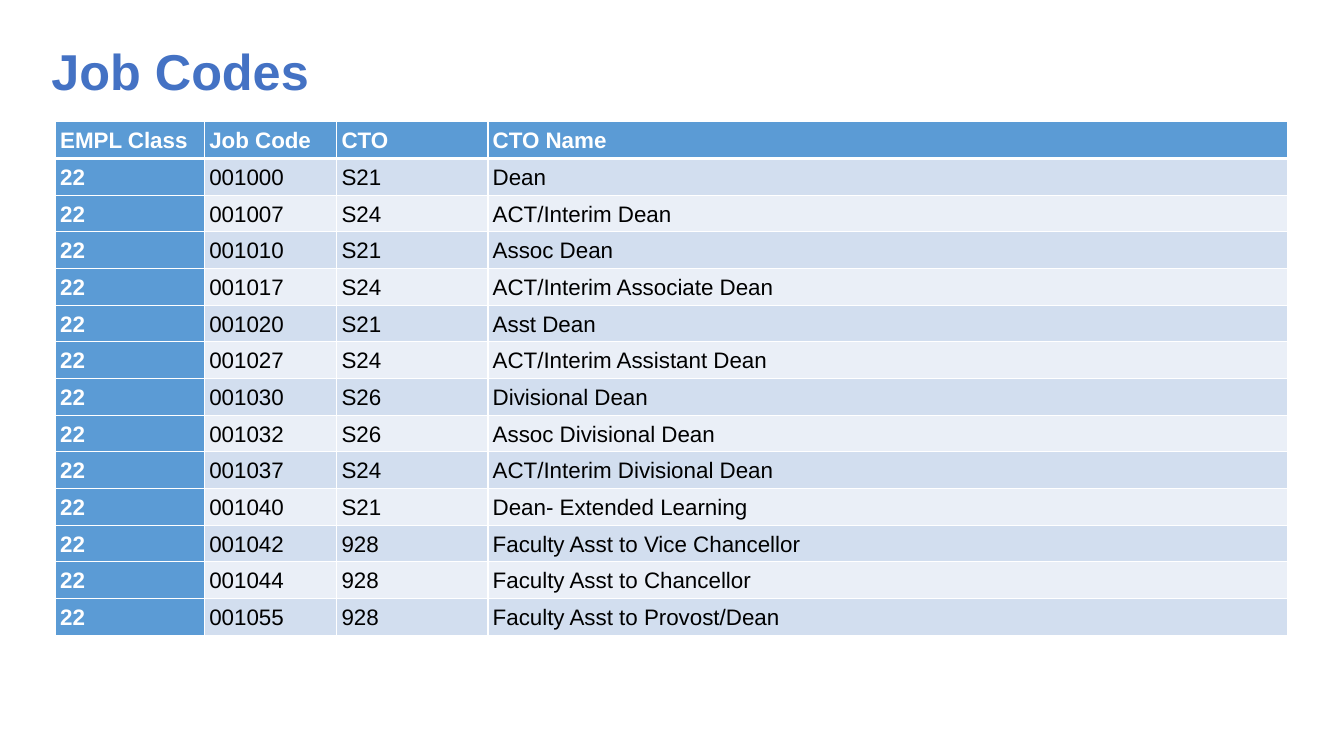
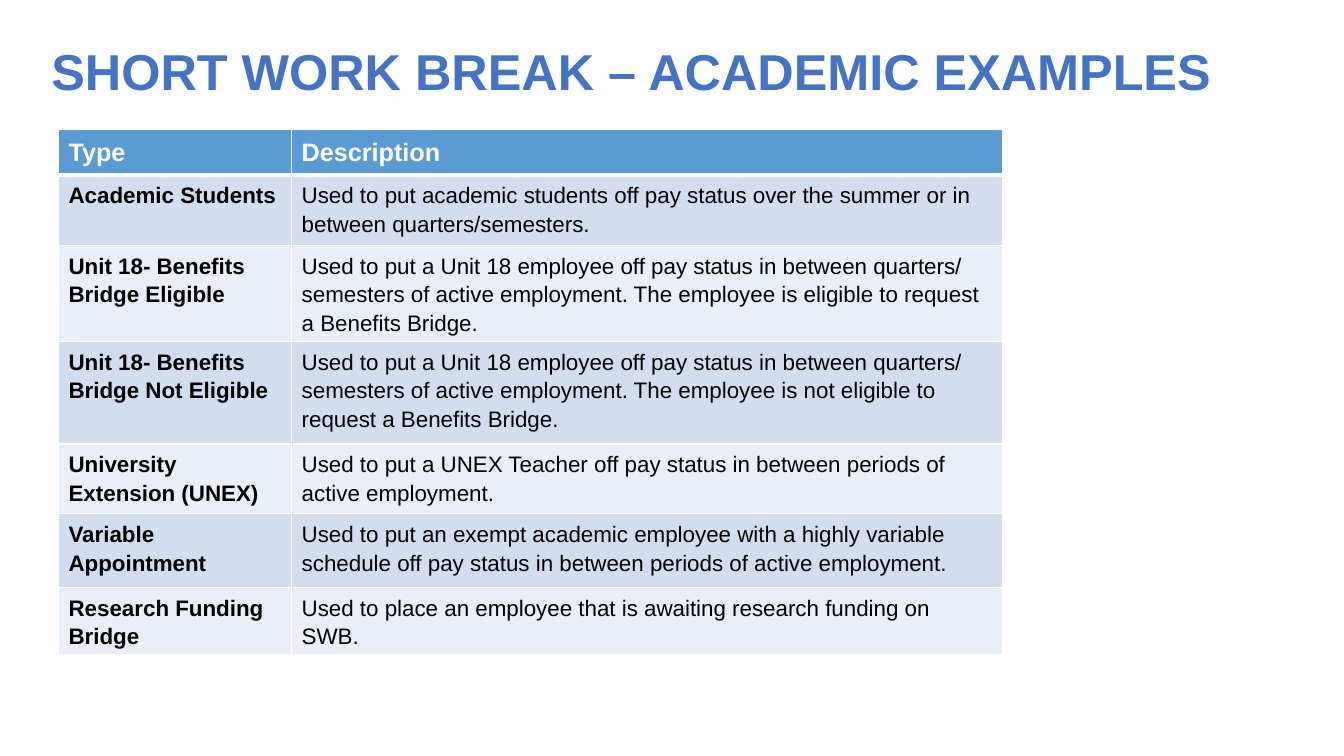
from lxml.etree import SubElement
from pptx import Presentation
from pptx.dml.color import RGBColor
from pptx.enum.text import MSO_ANCHOR, MSO_AUTO_SIZE, PP_ALIGN
from pptx.oxml.ns import qn
from pptx.util import Pt

FONT = "Arial"
COLORS = {
    "title": "4472C4",
    "header": "5B9BD5",
    "band_dark": "D2DEEF",
    "band_light": "EAEFF7",
    "white": "FFFFFF",
    "black": "000000",
}
TITLE_BOX = (29.5, 23, 863.5, 54)
TITLE_ONLY = 5

JOB_HEADER = ("EMPL Class", "Job Code", "CTO", "CTO Name")
EMPLOYEE_CLASS = "22"
JOBS = [
    ("001000", "S21", "Dean"),
    ("001007", "S24", "ACT/Interim Dean"),
    ("001010", "S21", "Assoc Dean"),
    ("001017", "S24", "ACT/Interim Associate Dean"),
    ("001020", "S21", "Asst Dean"),
    ("001027", "S24", "ACT/Interim Assistant Dean"),
    ("001030", "S26", "Divisional Dean"),
    ("001032", "S26", "Assoc Divisional Dean"),
    ("001037", "S24", "ACT/Interim Divisional Dean"),
    ("001040", "S21", "Dean- Extended Learning"),
    ("001042", "928", "Faculty Asst to Vice Chancellor"),
    ("001044", "928", "Faculty Asst to Chancellor"),
    ("001055", "928", "Faculty Asst to Provost/Dean"),
]

BREAK_HEADER = ("Type", "Description")
BREAKS = [
    ("Academic Students",
     "Used to put academic students off pay status over the summer or in "
     "between quarters/semesters."),
    ("Unit 18- Benefits Bridge Eligible",
     "Used to put a Unit 18 employee off pay status in between quarters/ "
     "semesters of active employment. The employee is eligible to request "
     "a Benefits Bridge."),
    ("Unit 18- Benefits Bridge Not Eligible",
     "Used to put a Unit 18 employee off pay status in between quarters/ "
     "semesters of active employment. The employee is not eligible to "
     "request a Benefits Bridge."),
    ("University Extension (UNEX)",
     "Used to put a UNEX Teacher off pay status in between periods of "
     "active employment."),
    ("Variable Appointment",
     "Used to put an exempt academic employee with a highly variable "
     "schedule off pay status in between periods of active employment."),
    ("Research Funding Bridge",
     "Used to place an employee that is awaiting research funding on SWB."),
]


def color(name):
    return RGBColor.from_string(COLORS[name])


def style_paragraph(paragraph, size, color_name, bold):
    font = paragraph.font
    font.name = FONT
    font.size = Pt(size)
    font.bold = bold
    font.color.rgb = color(color_name)


def add_titled_page(deck, title):
    page = deck.slides.add_slide(deck.slide_layouts[TITLE_ONLY])
    box = page.shapes.title
    box.left, box.top, box.width, box.height = map(Pt, TITLE_BOX)
    frame = box.text_frame
    frame.text = title
    frame.word_wrap = True
    frame.auto_size = MSO_AUTO_SIZE.NONE
    frame.vertical_anchor = MSO_ANCHOR.MIDDLE
    paragraph = frame.paragraphs[0]
    paragraph.alignment = PP_ALIGN.LEFT
    style_paragraph(paragraph, 36, "title", True)
    return page


def set_borders(cell, top, bottom):
    properties = cell._tc.get_or_add_tcPr()
    for side, width in (("L", 1), ("R", 1), ("T", top), ("B", bottom)):
        line = SubElement(properties, qn(f"a:ln{side}"), w=str(Pt(width)))
        fill = SubElement(line, qn("a:solidFill"))
        SubElement(fill, qn("a:srgbClr"), val=COLORS["white"])


def add_banded_table(page, left, top, widths, heights, rows, header_size,
                     line_spacing, filled_first_column=False, margin=None,
                     anchor=MSO_ANCHOR.TOP):
    table = page.shapes.add_table(
        len(rows), len(widths), Pt(left), Pt(top),
        Pt(sum(widths)), Pt(sum(heights))).table
    for column, width in zip(table.columns, widths):
        column.width = Pt(width)
    for row_index, (height, texts) in enumerate(zip(heights, rows)):
        table.rows[row_index].height = Pt(height)
        is_header = row_index == 0
        band = "band_dark" if row_index % 2 else "band_light"
        for column_index, text in enumerate(texts):
            cell = table.cell(row_index, column_index)
            is_first = column_index == 0
            is_filled = is_header or (is_first and filled_first_column)
            set_borders(cell, 3 if row_index == 1 else 1,
                        3 if is_header else 1)
            cell.fill.solid()
            cell.fill.fore_color.rgb = color("header" if is_filled else band)
            cell.vertical_anchor = anchor
            if margin is not None:
                cell.margin_left = cell.margin_right = Pt(margin)
                cell.margin_top = cell.margin_bottom = Pt(margin)
            cell.text = text
            paragraph = cell.text_frame.paragraphs[0]
            paragraph.line_spacing = line_spacing
            style_paragraph(paragraph, header_size if is_header else 16,
                            "white" if is_filled else "black",
                            is_header or is_first)


def add_job_codes(deck):
    page = add_titled_page(deck, "Job Codes")
    rows = [JOB_HEADER] + [(EMPLOYEE_CLASS, *job) for job in JOBS]
    add_banded_table(page, 39.6, 87, (106.5, 94.5, 108, 571.5),
                     [26.2] * len(rows), rows, header_size=16,
                     line_spacing=1.07, filled_first_column=True,
                     margin=3.4, anchor=MSO_ANCHOR.MIDDLE)


def add_work_breaks(deck):
    page = add_titled_page(deck, "SHORT WORK BREAK – ACADEMIC EXAMPLES")
    add_banded_table(page, 41.8, 92.4, (166.5, 508),
                     (32.4, 50.4, 65.5, 73.4, 49.7, 52.6, 38.9),
                     [BREAK_HEADER] + BREAKS, header_size=18,
                     line_spacing=1.15)


def main():
    deck = Presentation()
    deck.slide_width, deck.slide_height = Pt(960), Pt(540)
    add_job_codes(deck)
    add_work_breaks(deck)
    deck.save("out.pptx")


if __name__ == "__main__":
    main()
